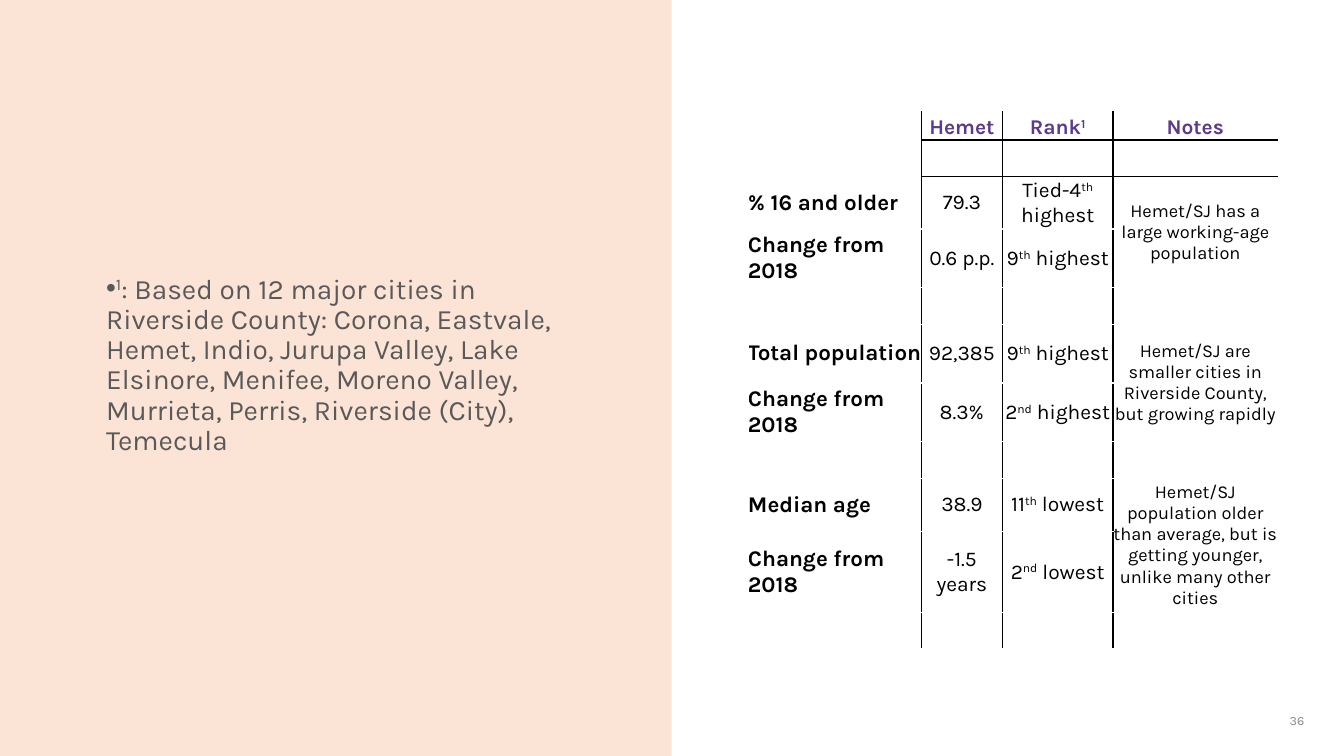
import pptx
import pptx.util
import pptx.dml.color
import pptx.enum.shapes
import pptx.enum.text
import pptx.oxml.ns
from lxml import etree

Cm, Pt = pptx.util.Cm, pptx.util.Pt
RGBColor = pptx.dml.color.RGBColor
ALIGN, ANCHOR = pptx.enum.text.PP_ALIGN, pptx.enum.text.MSO_ANCHOR
qn = pptx.oxml.ns.qn

PEACH = RGBColor(0xFB, 0xE3, 0xD6)
PURPLE = RGBColor(0x5B, 0x3B, 0x8C)
BLACK = RGBColor(0, 0, 0)
DARK_GREY = RGBColor(0x59, 0x59, 0x59)
LIGHT_GREY = RGBColor(0x8C, 0x8C, 0x8C)


def add_runs(paragraph, parts, size, color, bold=False):
    """Add the parts in turn; every second one is a superscript."""
    for position, part in enumerate(parts):
        if part:
            run = paragraph.add_run()
            run.text = part
            run.font.name = "Karla"
            run.font.size = Pt(size)
            run.font.bold = bold
            run.font.color.rgb = color
            if position % 2:
                run.font._element.set("baseline", "30000")


def add_border(cell, side):
    line = etree.SubElement(cell._tc.get_or_add_tcPr(), qn(f"a:{side}"), w="12700")
    fill = etree.SubElement(line, qn("a:solidFill"))
    etree.SubElement(fill, qn("a:srgbClr"), val=str(BLACK))


deck = pptx.Presentation()
deck.slide_width, deck.slide_height = Cm(33.87), Cm(19.05)
slide = deck.slides.add_slide(deck.slide_layouts[1])
title = slide.shapes.title._element
title.getparent().remove(title)

# Left panel, behind the footnote
panel = slide.shapes.add_shape(
    pptx.enum.shapes.MSO_SHAPE.RECTANGLE, 0, 0, Cm(16.93), Cm(19.05))
panel.shadow.inherit = False
panel.fill.solid()
panel.fill.fore_color.rgb = PEACH
panel.line.fill.background()
slide.shapes._spTree.insert(2, panel._element)

# Footnote on the ranking
footnote = slide.placeholders[1]
footnote.left, footnote.top = Cm(2.42), Cm(6.8)
footnote.width, footnote.height = Cm(12.1), Cm(10.46)
footnote.text_frame.vertical_anchor = ANCHOR.TOP
note = footnote.text_frame.paragraphs[0]
note.line_spacing = 0.9
note.space_before, note.space_after = Pt(0), Pt(6)
bullet = note._p.get_or_add_pPr()
bullet.set("marL", "0")
bullet.set("indent", str(-Cm(0.64)))
etree.SubElement(bullet, qn("a:buFont"), typeface="Arial")
etree.SubElement(bullet, qn("a:buChar"), char="•")
add_runs(note, ("", "1", ": Based on 12 major cities in Riverside County: Corona, "
                "Eastvale, Hemet, Indio, Jurupa Valley, Lake Elsinore, Menifee, "
                "Moreno Valley, Murrieta, Perris, Riverside (City), Temecula"),
         20, DARK_GREY)

# Page number
page = slide.shapes.add_textbox(Cm(25.5), Cm(17.65), Cm(7.62), Cm(1.02))
page.text_frame.word_wrap = True
page.text_frame.vertical_anchor = ANCHOR.MIDDLE
page_line = page.text_frame.paragraphs[0]
page_line.alignment = ALIGN.RIGHT
add_runs(page_line, ("36",), 9, LIGHT_GREY)

# Statistics: label, value, rank, notes
CHANGE = ("Change from 2018",)
BLANK = ((), (), (), ())
statistics = [
    ((), ("Hemet",), ("Rank", "1"), ("Notes",)),
    BLANK,
    (("% 16 and older",), ("79.3",), ("Tied-4", "th", " highest"),
     ("Hemet/SJ has a large working-age population",)),
    (CHANGE, ("0.6 p.p.",), ("9", "th", " highest"), ()),
    BLANK,
    (("Total population",), ("92,385",), ("9", "th", " highest"),
     ("Hemet/SJ are smaller cities in Riverside County, but growing rapidly",)),
    (CHANGE, ("8.3%",), ("2", "nd", " highest"), ()),
    BLANK,
    (("Median age",), ("38.9",), ("11", "th", " lowest"),
     ("Hemet/SJ population older than average, but is getting younger, "
      "unlike many other cities",)),
    (CHANGE, ("-1.5 years",), ("2", "nd", " lowest"), ()),
    BLANK,
]
column_widths = [4.37, 2.04, 2.79, 4.14]
row_heights = [0.71, 0.92, 1.32, 1.48, 0.92, 1.48, 1.48, 0.92, 1.35, 2.03, 0.92]
column_sizes = [16, 15, 15, 13]

frame = slide.shapes.add_table(len(statistics), 4, Cm(18.85), Cm(2.82),
                               Cm(sum(column_widths)), Cm(sum(row_heights)))
ranking = frame.table
ranking.first_row = ranking.horz_banding = False
for column, width in zip(ranking.columns, column_widths):
    column.width = Cm(width)
for row, height in zip(ranking.rows, row_heights):
    row.height = Cm(height)

for r, entries in enumerate(statistics):
    for c, parts in enumerate(entries):
        cell = ranking.cell(r, c)
        cell.margin_left = cell.margin_right = cell.margin_top = cell.margin_bottom = 0
        cell.vertical_anchor = ANCHOR.MIDDLE if r else ANCHOR.BOTTOM
        line = cell.text_frame.paragraphs[0]
        line.alignment = ALIGN.CENTER if c else ALIGN.LEFT
        if parts:
            add_runs(line, parts, column_sizes[c] if r else 15,
                     BLACK if r else PURPLE, bold=c == 0 or r == 0)
        else:
            etree.SubElement(line._p, qn("a:endParaRPr"), sz="1000")
        # Rules between columns, and below the two top rows
        sides = {"lnL": c > 0, "lnR": c < 3,
                 "lnT": c > 0 and r in (1, 2), "lnB": c > 0 and r < 2}
        for side, shown in sides.items():
            if shown:
                add_border(cell, side)
        cell.fill.background()

# Each note spans a figure and its change
for r in (2, 5, 8):
    ranking.cell(r, 3).merge(ranking.cell(r + 1, 3))

deck.save("out.pptx")
